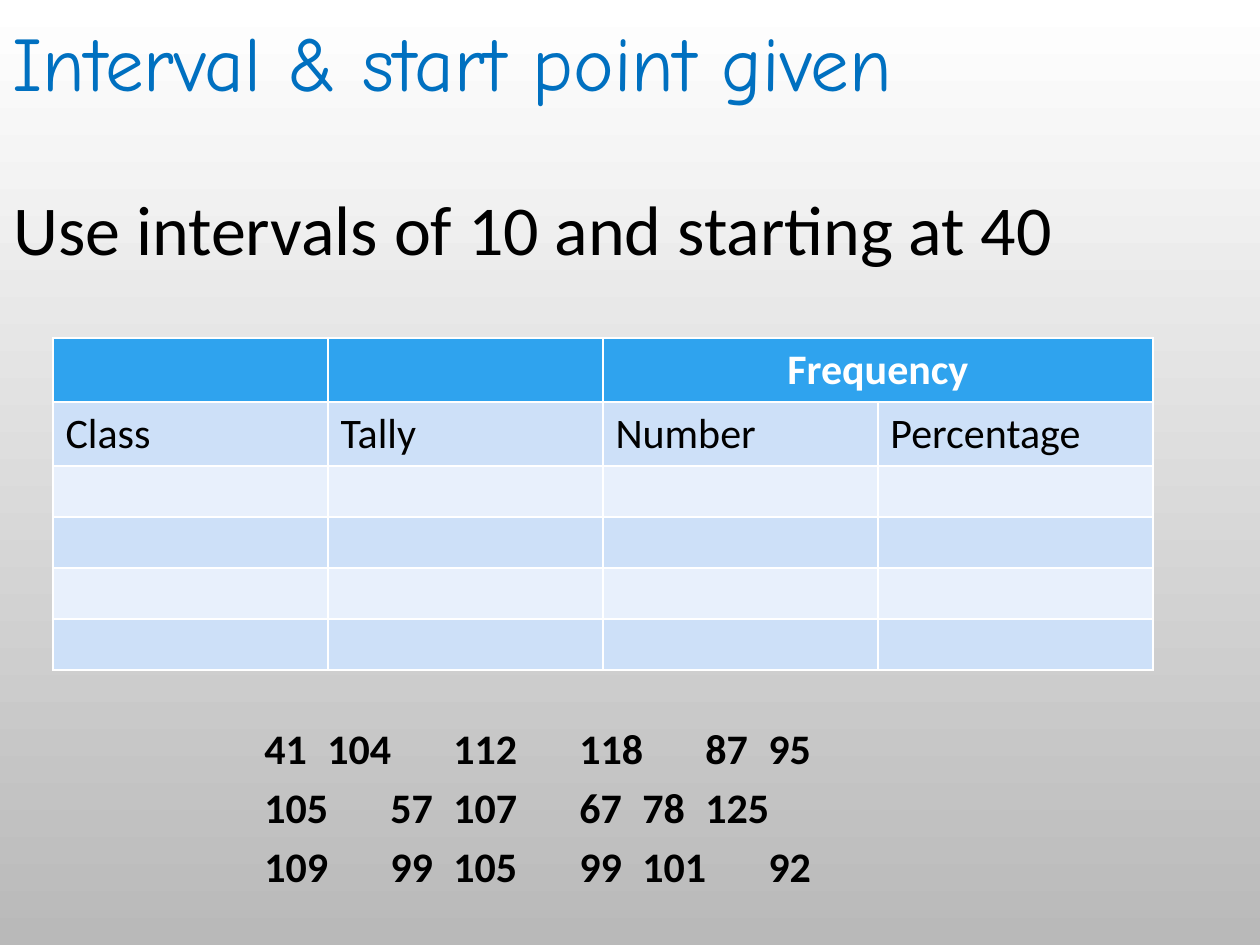
from dataclasses import dataclass

from lxml.etree import SubElement
from pptx import Presentation
from pptx.dml.color import RGBColor
from pptx.enum.text import MSO_ANCHOR as Anchor, MSO_AUTO_SIZE as AutoSize, PP_ALIGN as Align
from pptx.oxml.ns import qn
from pptx.util import Emu, Inches, Pt


@dataclass(frozen=True)
class Theme:
    title_color: str = "0070C0"
    ink: str = "000000"
    white: str = "FFFFFF"
    page_end: str = "B9B9B9"
    header: str = "2FA3EE"
    band_dark: str = "CDE0F8"
    band_light: str = "E8F0FC"
    title_font: str = "Comic Neue"
    body_font: str = "Calibri"
    title_size: int = 44
    task_size: int = 40
    table_size: int = 24


THEME = Theme()
SCALE = Inches(10) / 1260


def px(length):
    return Emu(round(length * SCALE))


def write(frame, text, *, size, color=THEME.ink, font=THEME.body_font, bold=False,
          align=Align.LEFT, gap=0, tabs=()):
    """Fill a frame, one paragraph a line, with right-aligned tab stops in px."""
    frame.text = text
    for index, paragraph in enumerate(frame.paragraphs):
        props = paragraph._p.get_or_add_pPr()
        props.set("marL", "0")
        props.set("indent", "0")
        paragraph.alignment = align
        paragraph.space_before = Pt(gap if index else 0)
        SubElement(props, qn("a:buNone"))
        if tabs:
            stops = SubElement(props, qn("a:tabLst"))
            for stop in tabs:
                SubElement(stops, qn("a:tab"), pos=str(px(stop)), algn="r")
        paragraph.font.name = font
        paragraph.font.size = Pt(size)
        paragraph.font.bold = bold
        paragraph.font.color.rgb = RGBColor.from_string(color)


deck = Presentation()
deck.slide_width, deck.slide_height = px(1260), px(945)
slide = deck.slides.add_slide(deck.slide_layouts[1])

page = slide.background.fill
page.gradient()
page.gradient_angle = 270
for stop, color in zip(page.gradient_stops, (THEME.white, THEME.page_end)):
    stop.color.rgb = RGBColor.from_string(color)

# Title and task
title, task = slide.shapes.title, slide.placeholders[1]
title.left, title.top, title.width, title.height = px(0), px(8), px(1045), px(106)
task.left, task.top, task.width, task.height = px(1), px(179), px(1257), px(97)
for heading in (title, task):
    heading.text_frame.auto_size = AutoSize.NONE
    heading.text_frame.vertical_anchor = Anchor.TOP
title.text_frame.word_wrap = False
write(title.text_frame, "Interval & start point given", size=THEME.title_size,
      color=THEME.title_color, font=THEME.title_font)
write(task.text_frame, "Use intervals of 10 and starting at 40", size=THEME.task_size)

# Frequency table
row_heights = [63, 63, 51, 51, 51, 51]
column_width = 275
frequency = slide.shapes.add_table(len(row_heights), 4, px(53), px(338),
                                   px(4 * column_width), px(sum(row_heights))).table
for column in frequency.columns:
    column.width = px(column_width)
for number, (row, height) in enumerate(zip(frequency.rows, row_heights)):
    row.height = px(height)
    band = THEME.band_dark if number % 2 else THEME.band_light
    for cell in row.cells:
        cell.fill.solid()
        cell.fill.fore_color.rgb = RGBColor.from_string(band if number else THEME.header)

frequency.cell(0, 2).merge(frequency.cell(0, 3))
write(frequency.cell(0, 2).text_frame, "Frequency", size=THEME.table_size,
      color=THEME.white, bold=True, align=Align.CENTER)
for column, label in enumerate(["Class", "Tally", "Number", "Percentage"]):
    write(frequency.cell(1, column).text_frame, label, size=THEME.table_size)

# Data values, right-aligned in columns
values = [
    [41, 104, 112, 118, 87, 95],
    [105, 57, 107, 67, 78, 125],
    [109, 99, 105, 99, 101, 92],
]
data = slide.shapes.add_textbox(px(189), px(714), px(784), px(185)).text_frame
data.word_wrap = True
data.vertical_anchor = Anchor.MIDDLE
write(data, "\n".join("".join(f"\t{value}" for value in row) for row in values),
      size=THEME.table_size, bold=True, gap=4.8,
      tabs=[63 + 126 * column for column in range(6)])

deck.save("out.pptx")
